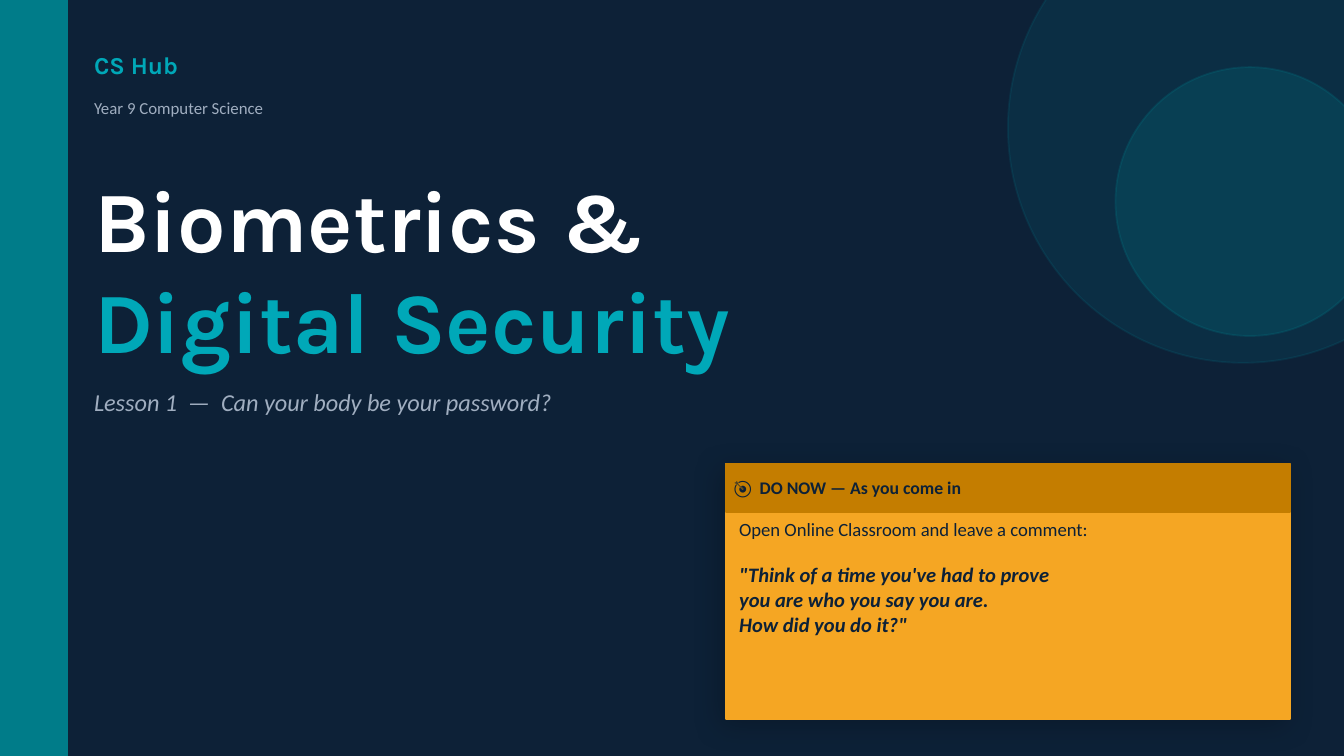
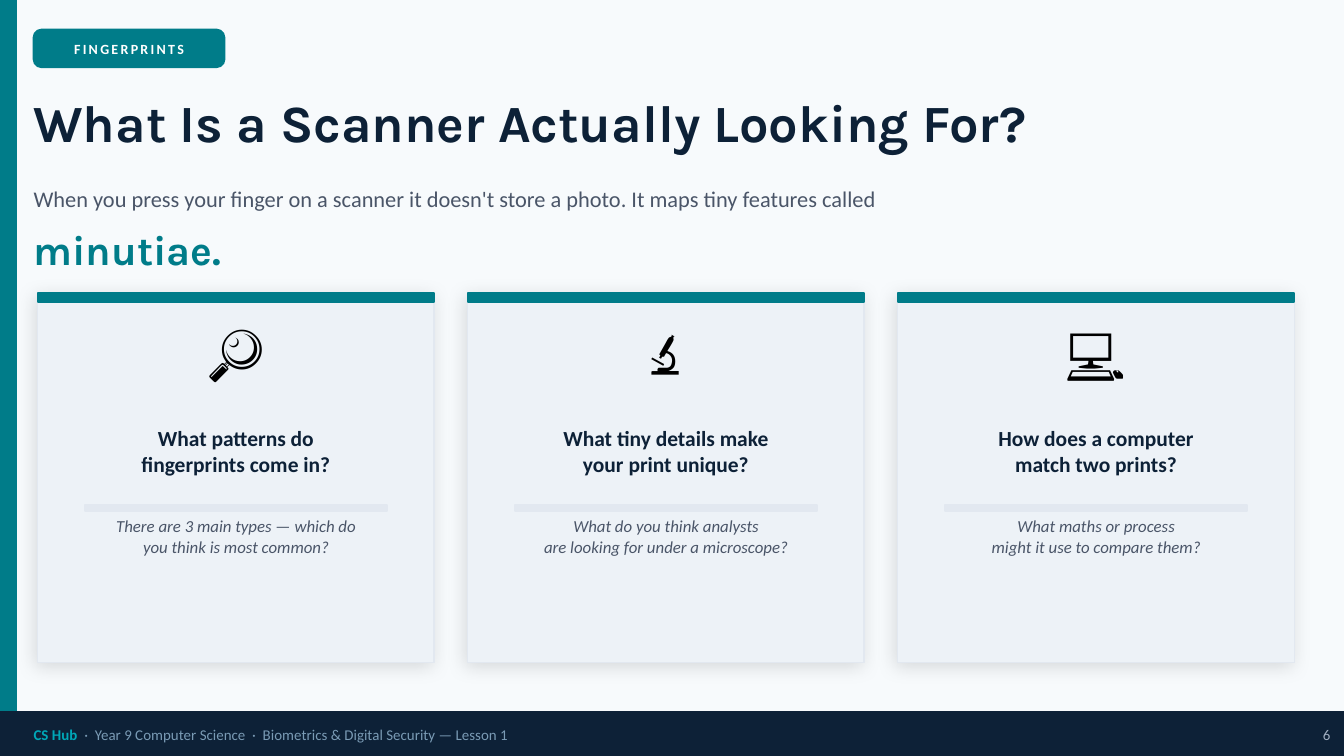
import dataclasses

import lxml.etree
import pptx
import pptx.dml.color
import pptx.enum.shapes
import pptx.enum.text
import pptx.oxml.ns
import pptx.util

SHAPE = pptx.enum.shapes.MSO_SHAPE
ALIGN = pptx.enum.text.PP_ALIGN
ANCHOR = pptx.enum.text.MSO_ANCHOR
COLUMNS, ROWS = 100, 56.25


def style(size, color, name="Calibri", spacing=0, **font):
    """Describe a text style: font attributes, colour and letter spacing in points."""
    return {"font": {"name": name, "size": pptx.util.Pt(size), **font},
            "color": color, "spacing": spacing}


@dataclasses.dataclass(frozen=True)
class Theme:
    navy = "0D2137"
    teal = "007C89"
    bright = "00A8B8"
    white = "FFFFFF"
    paper = "F7FAFC"
    card = "EDF2F7"
    rule = "E2E8F0"
    amber = "F5A623"
    amber_dark = "C47D00"
    muted = "A0AEC0"
    slate = "4A5568"

    brand = style(13, bright, "Karla", bold=True)
    course = style(9, muted)
    cover_title = style(46, white, "Karla", bold=True)
    cover_accent = style(46, bright, "Karla", bold=True)
    subtitle = style(13, muted, italic=True)
    task_heading = style(9.5, navy, bold=True)
    task = style(10, navy)
    task_quote = style(11, navy, bold=True, italic=True)
    tag = style(7.5, white, spacing=1.2, bold=True)
    title = style(28, navy, "Karla", bold=True)
    lead = style(12, slate)
    keyword = style(22, teal, "Karla", bold=True)
    icon = style(30, "000000")
    question = style(11.5, navy, bold=True)
    hint = style(9, slate, italic=True)
    footer_brand = style(8, bright, bold=True)
    footer = style(8, "7A9BB5", bold=False)
    page_number = style(8, muted)


def rgb(color):
    return pptx.dml.color.RGBColor.from_string(color)


def add_child(parent, tag, **attributes):
    values = {key: str(value) for key, value in attributes.items()}
    return lxml.etree.SubElement(parent, pptx.oxml.ns.qn(tag), values)


class Deck:
    """Draws on the current slide; boxes are (left, top, width, height) in grid cells."""

    def __init__(self, theme):
        self.theme = theme
        self.presentation = pptx.Presentation()
        self.presentation.slide_width = pptx.util.Inches(10)
        self.presentation.slide_height = pptx.util.Inches(5.625)
        self.slide = None

    def new_slide(self, background, band_width):
        self.slide = self.presentation.slides.add_slide(self.presentation.slide_layouts[6])
        fill = self.slide.background.fill
        fill.solid()
        fill.fore_color.rgb = rgb(background)
        self.shape((0, 0, band_width, ROWS), self.theme.teal)

    def place(self, box):
        column = self.presentation.slide_width / COLUMNS
        row = self.presentation.slide_height / ROWS
        return [round(value * unit) for value, unit in zip(box, (column, row) * 2)]

    def shape(self, box, fill, kind=SHAPE.RECTANGLE, line=None, line_width=1, opacity=None):
        shape = self.slide.shapes.add_shape(kind, *self.place(box))
        shape.shadow.inherit = False
        shape.fill.solid()
        shape.fill.fore_color.rgb = rgb(fill)
        shape.line.color.rgb = rgb(line or fill)
        shape.line.width = pptx.util.Pt(line_width)
        if opacity:
            for color in shape.element.spPr.findall(".//" + pptx.oxml.ns.qn("a:srgbClr")):
                add_child(color, "a:alpha", val=opacity * 1000)
        return shape

    def cast_shadow(self, shape, opacity, blur, distance):
        effects = shape.element.spPr.find(pptx.oxml.ns.qn("a:effectLst"))
        shadow = add_child(effects, "a:outerShdw", blurRad=pptx.util.Pt(blur),
                           dist=pptx.util.Pt(distance), dir=135 * 60000,
                           algn="bl", rotWithShape=0)
        color = add_child(shadow, "a:srgbClr", val="000000")
        add_child(color, "a:alpha", val=opacity * 1000)

    def text(self, box, *paragraphs, align=ALIGN.LEFT, anchor=ANCHOR.MIDDLE):
        """Add a text box; each paragraph is a list of (words, style) runs."""
        frame = self.slide.shapes.add_textbox(*self.place(box)).text_frame
        settings = {"word_wrap": True, "vertical_anchor": anchor, "margin_left": 0,
                    "margin_top": 0, "margin_right": 0, "margin_bottom": 0}
        for name, value in settings.items():
            setattr(frame, name, value)
        for index, runs in enumerate(paragraphs):
            paragraph = frame.add_paragraph() if index else frame.paragraphs[0]
            paragraph.alignment = align
            for words, look in runs:
                run = paragraph.add_run()
                run.text = words
                for name, value in look["font"].items():
                    setattr(run.font, name, value)
                run.font.color.rgb = rgb(look["color"])
                if look["spacing"]:
                    run.font._element.set("spc", str(round(look["spacing"] * 100)))
        return frame

    def lines(self, box, lines, look, **options):
        return self.text(box, *([(line, look)] for line in lines), **options)

    def tag(self, box, label):
        shape = self.shape(box, self.theme.teal, SHAPE.ROUNDED_RECTANGLE)
        shape.adjustments[0] = 0.21
        self.lines(box, [label], self.theme.tag, align=ALIGN.CENTER)

    def footer(self, number):
        top, height = 53, 3.25
        self.shape((0, top, COLUMNS, height), self.theme.navy)
        self.text((2.5, top, 85, height), [
            ("CS Hub", self.theme.footer_brand),
            ("  ·  Year 9 Computer Science  ·  Biometrics & Digital Security — Lesson 1",
             self.theme.footer)])
        self.lines((95, top, 4, height), [str(number)], self.theme.page_number,
                   align=ALIGN.RIGHT)

    def card(self, left, icon, question, hint):
        theme, top, width, inset = self.theme, 21.8, 29.5, 1.2
        inner = width - 2 * inset
        body = self.shape((left, top, width, 27.5), theme.card, line=theme.rule,
                          line_width=0.75)
        self.cast_shadow(body, opacity=12, blur=10, distance=2)
        self.shape((left, top, width, 0.7), theme.teal)
        self.lines((left, top + 1, width, 6.5), [icon], theme.icon, align=ALIGN.CENTER)
        self.lines((left + inset, top + 8, inner, 7.5), question, theme.question,
                   align=ALIGN.CENTER)
        self.shape((left + 3.5, top + 15.8, width - 7, 0.4), theme.rule)
        self.lines((left + inset, top + 16.6, inner, 8.5), hint, theme.hint,
                   align=ALIGN.CENTER, anchor=ANCHOR.TOP)


def build_cover(deck):
    theme = deck.theme
    deck.new_slide(theme.navy, band_width=5)
    deck.shape((75, -8, 35, 35), theme.bright, SHAPE.OVAL, opacity=10)
    deck.shape((83, 5, 20, 20), theme.teal, SHAPE.OVAL, opacity=22)
    for top, width, height, words, look in (
            (2.8, 30, 4, "CS Hub", theme.brand),
            (6.5, 40, 3, "Year 9 Computer Science", theme.course),
            (12, 85, 8.5, "Biometrics &", theme.cover_title),
            (19.5, 85, 8.5, "Digital Security", theme.cover_accent),
            (28, 75, 3.8, "Lesson 1  —  Can your body be your password?", theme.subtitle)):
        deck.lines((7, top, width, height), [words], look)

    left, top, width, heading = 54, 34.5, 42, 3.6
    panel = deck.shape((left, top, width, 19), theme.amber)
    deck.cast_shadow(panel, opacity=22, blur=16, distance=4)
    deck.shape((left, top, width, heading), theme.amber_dark)
    deck.lines((left + 0.6, top, width - 1.2, heading),
               ["🎯  DO NOW — As you come in"], theme.task_heading)
    quote = ('"Think of a time you\'ve had to prove',
             "you are who you say you are.", 'How did you do it?"')
    frame = deck.text((left + 1, top + 4, width - 2, 14.2),
                      [("Open Online Classroom and leave a comment:", theme.task)],
                      *([(line, theme.task_quote)] for line in quote),
                      anchor=ANCHOR.TOP)
    frame.paragraphs[1].space_before = pptx.util.Pt(12)


def build_scanner(deck):
    theme = deck.theme
    deck.new_slide(theme.paper, band_width=1.2)
    deck.footer(6)
    deck.tag((2.5, 2.2, 14.2, 2.8), "FINGERPRINTS")
    deck.lines((2.5, 5.8, 95, 6.5), ["What Is a Scanner Actually Looking For?"], theme.title)
    deck.lines((2.5, 12.8, 95, 4),
               ["When you press your finger on a scanner it doesn't store a photo. "
                "It maps tiny features called"], theme.lead)
    deck.lines((2.5, 16, 30, 5), ["minutiae."], theme.keyword)
    cards = (
        ("🔎", ("What patterns do", "fingerprints come in?"),
         ("There are 3 main types — which do", "you think is most common?")),
        ("🔬", ("What tiny details make", "your print unique?"),
         ("What do you think analysts", "are looking for under a microscope?")),
        ("💻", ("How does a computer", "match two prints?"),
         ("What maths or process", "might it use to compare them?")),
    )
    for index, card in enumerate(cards):
        deck.card(2.8 + 32 * index, *card)


def main():
    deck = Deck(Theme())
    build_cover(deck)
    build_scanner(deck)
    deck.presentation.save("out.pptx")


if __name__ == "__main__":
    main()
